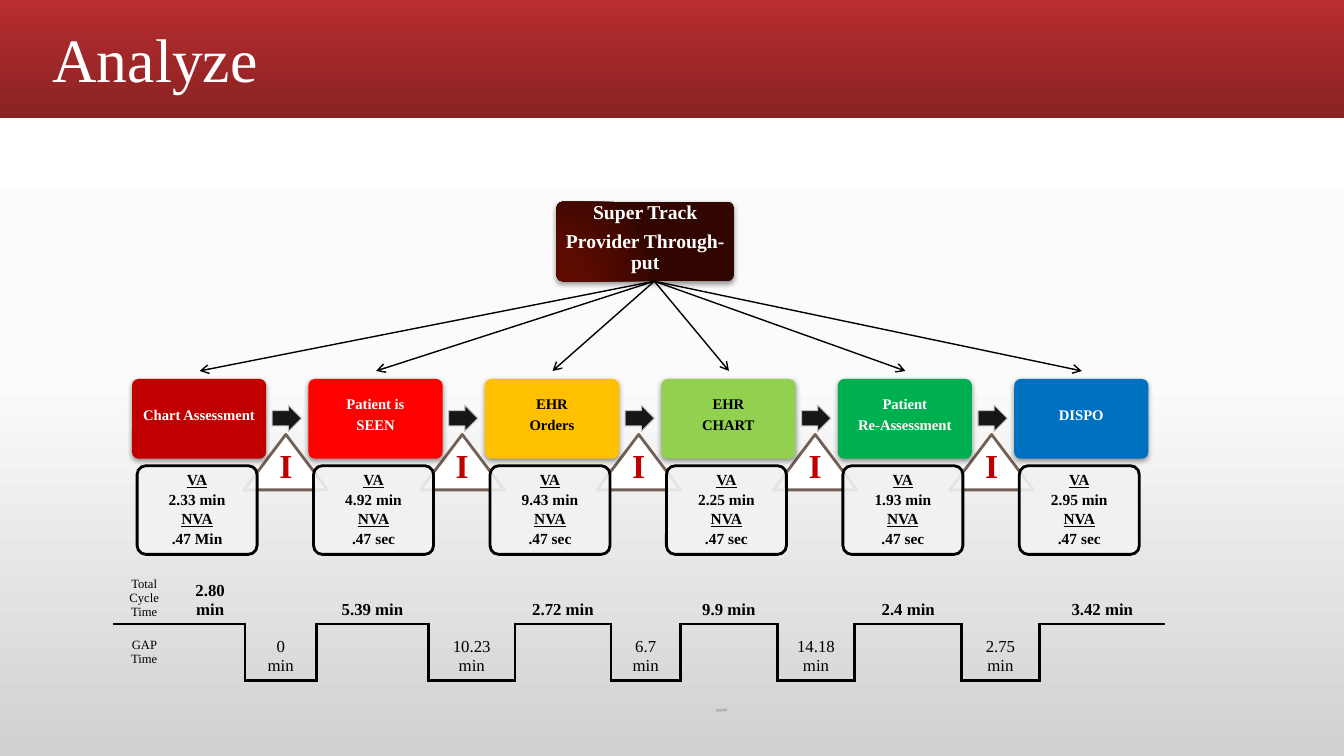
"""Build the Analyze slide: a process flow with value-added and gap times."""
from copy import deepcopy
from dataclasses import dataclass

from lxml import etree
from pptx import Presentation
from pptx.dml.color import RGBColor
from pptx.enum.shapes import MSO_CONNECTOR, MSO_SHAPE
from pptx.enum.text import MSO_ANCHOR, PP_ALIGN
from pptx.oxml.ns import qn
from pptx.util import Inches, Pt

RECTANGLE = MSO_SHAPE.RECTANGLE
ROUNDED = MSO_SHAPE.ROUNDED_RECTANGLE
TRIANGLE = MSO_SHAPE.ISOSCELES_TRIANGLE
ARROW = MSO_SHAPE.RIGHT_ARROW
STRAIGHT = MSO_CONNECTOR.STRAIGHT
TOP, MIDDLE, BOTTOM = MSO_ANCHOR.TOP, MSO_ANCHOR.MIDDLE, MSO_ANCHOR.BOTTOM
LEFT, CENTER = PP_ALIGN.LEFT, PP_ALIGN.CENTER
NO_GRID_STYLE = "{2D5ABB26-0587-4C30-8999-92F81FD0307C}"


@dataclass(frozen=True)
class Theme:
    """Colours, font and type sizes of the slide."""
    font: str = "Times New Roman"
    white: str = "FFFFFF"
    black: str = "000000"
    mark: str = "C00000"
    triangle_line: str = "726056"
    arrow: str = "161617"
    arrow_line: str = "BFBFBF"
    detail: str = "F2F2F2"
    dash: str = "B2B2B2"
    background: tuple = ((0, "FFFFFF"), (50, "FBFBFB"), (100, "D1D1D1"))
    band: tuple = ((0, "B82D2F"), (100, "8A2223"))
    hub: tuple = ((0, "5E0B00"), (30, "5B0B00"), (75, "440800"), (100, "320600"))
    title_size: float = 44
    mark_size: float = 24
    hub_size: float = 14
    card_size: float = 10.5
    detail_size: float = 11
    time_size: float = 12
    label_size: float = 9


THEME = Theme()
PITCH, FIRST_CARD = 1.75, 1.31
CARD_WIDTH, CARD_HEIGHT = 1.33, 0.79
STEPS = [
    (["Chart Assessment"], "C00000", THEME.white, "2.33 min", ".47 Min"),
    (["Patient is", "SEEN"], "FF0000", THEME.white, "4.92 min", ".47 sec"),
    (["EHR", "Orders"], "FFC000", THEME.black, "9.43 min", ".47 sec"),
    (["EHR", "CHART"], "92D050", THEME.black, "2.25 min", ".47 sec"),
    (["Patient", "Re-Assessment"], "00B050", THEME.white, "1.93 min", ".47 sec"),
    (["DISPO"], "0070C0", THEME.white, "2.95 min", ".47 sec"),
]
COLUMN_WIDTHS = [0.62, 0.69, 0.71, 1.11, 0.86, 0.95, 0.69, 0.96, 0.77, 1.06, 0.77, 1.25]
ROW_HEIGHTS = [0.52, 0.56]
CYCLE_TIMES = ["2.80 min", "5.39 min", "2.72 min", "9.9 min", "2.4 min", "3.42 min"]
GAP_TIMES = [["0", "min"], ["10.23 min"], ["6.7", "min"], ["14.18", "min"], ["2.75", "min"]]


def rgb(value):
    """Turn a hex string into a colour."""
    return RGBColor.from_string(value)


def set_gradient(fill, stops):
    """Give a fill a vertical gradient and return its element."""
    fill.gradient()
    fill.gradient_angle = 270
    stop_list = fill.gradient_stops[0]._gs.getparent()
    while len(stop_list) < len(stops):
        stop_list.append(deepcopy(stop_list[0]))
    for stop, (position, color) in zip(fill.gradient_stops, stops):
        stop.position = position / 100
        stop.color.rgb = rgb(color)
    return stop_list.getparent()


def write_lines(frame, lines, size, color, bold=True, gap=0, spacing=1.0, align=CENTER):
    """Write one paragraph per line with shared formatting."""
    frame.word_wrap = True
    for index, line in enumerate(lines):
        paragraph = frame.add_paragraph() if index else frame.paragraphs[0]
        paragraph.text = line
        paragraph.alignment = align
        paragraph.line_spacing = spacing
        paragraph.space_before = Pt(0)
        paragraph.space_after = Pt(gap)
        paragraph.font.name = THEME.font
        paragraph.font.size = Pt(size)
        paragraph.font.bold = bold
        paragraph.font.color.rgb = rgb(color)


def set_insets(frame, left, top, right, bottom):
    """Set the four text margins in inches."""
    frame.margin_left, frame.margin_top = Inches(left), Inches(top)
    frame.margin_right, frame.margin_bottom = Inches(right), Inches(bottom)


def add_block(slide, kind, box, fill=None, line=None, width=0):
    """Add a preset shape without the default shadow and line."""
    shape = slide.shapes.add_shape(kind, *map(Inches, box))
    shape.shadow.inherit = False
    if fill:
        shape.fill.solid()
        shape.fill.fore_color.rgb = rgb(fill)
    if line:
        shape.line.color.rgb = rgb(line)
        shape.line.width = Pt(width)
    else:
        shape.line.fill.background()
    return shape


def add_card(slide, box, lines, size, color, gap, fill=None):
    """Add a rounded card with a soft shadow and bold text."""
    card = add_block(slide, ROUNDED, box, fill)
    card.adjustments[0] = 0.08
    effects = card._element.spPr.find(qn("a:effectLst"))
    shadow = etree.SubElement(effects, qn("a:outerShdw"), blurRad=str(Pt(4)),
                              dist=str(Pt(1.6)), dir="5400000", rotWithShape="0")
    shade = etree.SubElement(shadow, qn("a:srgbClr"), val=THEME.black)
    etree.SubElement(shade, qn("a:alpha"), val="42000")
    frame = card.text_frame
    frame.vertical_anchor = MIDDLE
    set_insets(frame, 0.07, 0.07, 0.07, 0.14)
    write_lines(frame, lines, size, color, gap=gap, spacing=0.9)
    return card


def add_hub(slide):
    """Add the dark card that heads the flow."""
    hub = add_card(slide, (5.52, 2, 1.76, CARD_HEIGHT), ["Super Track", "Provider Through-put"],
                   THEME.hub_size, THEME.white, 5.5)
    gradient = set_gradient(hub.fill, THEME.hub)
    gradient.remove(gradient.find(qn("a:lin")))
    focus = etree.SubElement(gradient, qn("a:path"), path="circle")
    etree.SubElement(focus, qn("a:fillToRect"), l="5000", t="100000", r="120000", b="10000")


def add_detail(slide, left, value_time, other_time):
    """Add the outlined box with value-added and non-value-added times."""
    box = add_block(slide, ROUNDED, (left, 4.62, 1.19, 0.88), THEME.detail, THEME.black, 2)
    box.adjustments[0] = 0.1
    color = box._element.spPr.find(qn("a:solidFill")).find(qn("a:srgbClr"))
    etree.SubElement(color, qn("a:alpha"), val="90000")
    frame = box.text_frame
    frame.vertical_anchor = MIDDLE
    set_insets(frame, 0.07, 0.07, 0.07, 0.07)
    write_lines(frame, ["VA", value_time, "NVA", other_time],
                THEME.detail_size, THEME.black, gap=2, spacing=0.9)
    for heading in frame.paragraphs[::2]:
        heading.font.underline = True


def add_triangle(slide, left):
    """Add an inventory triangle."""
    triangle = add_block(slide, TRIANGLE, (left, 4.31, 0.83, 0.55),
                         THEME.white, THEME.triangle_line, 2)
    triangle.text_frame.vertical_anchor = BOTTOM
    write_lines(triangle.text_frame, ["I"], THEME.mark_size, THEME.mark)


def add_line(slide, start, end, color, width, arrow=False):
    """Add a straight line, with an open arrowhead if wanted."""
    line = slide.shapes.add_connector(STRAIGHT, *map(Inches, (*start, *end)))
    line.line.color.rgb = rgb(color)
    line.line.width = Pt(width)
    if arrow:
        etree.SubElement(line.line._get_or_add_ln(), qn("a:tailEnd"), type="arrow")
    etree.SubElement(line._element.spPr, qn("a:effectLst"))


def set_borders(cell, sides):
    """Draw black borders on the given sides, in the order L, R, T, B."""
    for index, side in enumerate(sides):
        border = etree.Element(qn(f"a:ln{side}"), w=str(Pt(2.25)))
        fill = etree.SubElement(border, qn("a:solidFill"))
        etree.SubElement(fill, qn("a:srgbClr"), val=THEME.black)
        cell._tc.get_or_add_tcPr().insert(index, border)


def add_timeline(slide):
    """Add the stepped timeline of cycle and gap times as a table."""
    box = map(Inches, (1.12, 5.67, sum(COLUMN_WIDTHS), sum(ROW_HEIGHTS)))
    table = slide.shapes.add_table(2, len(COLUMN_WIDTHS), *box).table
    table.first_row = table.horz_banding = False
    table._tbl.tblPr.find(qn("a:tableStyleId")).text = NO_GRID_STYLE
    for row, height in zip(table.rows, ROW_HEIGHTS):
        row.height = Inches(height)
    for index, width in enumerate(COLUMN_WIDTHS):
        table.columns[index].width = Inches(width)
        upper, lower = table.cell(0, index), table.cell(1, index)
        for cell in (upper, lower):
            cell.fill.background()
            cell.vertical_anchor = BOTTOM
        if index and index % 2 == 0:
            set_borders(lower, "LRB")
            write_lines(lower.text_frame, GAP_TIMES[index // 2 - 1],
                        THEME.time_size, THEME.black, bold=False)
            continue
        set_borders(upper, "B")
        set_borders(lower, "T")
        if index:
            write_lines(upper.text_frame, [CYCLE_TIMES[index // 2]], THEME.time_size, THEME.black)
    for row, label in enumerate(["Total Cycle Time", "GAP Time"]):
        write_lines(table.cell(row, 0).text_frame, [label], THEME.label_size,
                    THEME.black, bold=False)
    table.cell(1, 0).vertical_anchor = MIDDLE


def add_title(slide):
    """Place the title on top of the red band."""
    band = add_block(slide, RECTANGLE, (0, 0, 13.33, 1.17))
    set_gradient(band.fill, THEME.band)
    title = slide.shapes.title
    band._element.addnext(title._element)
    title.left, title.top, title.width, title.height = map(Inches, (0.42, 0.11, 11.75, 0.89))
    title.text_frame.vertical_anchor = BOTTOM
    write_lines(title.text_frame, ["Analyze"], THEME.title_size, THEME.white,
                bold=False, spacing=0.9, align=LEFT)


def main():
    """Build and save the slide."""
    presentation = Presentation()
    presentation.slide_width, presentation.slide_height = Inches(13.33), Inches(7.5)
    slide = presentation.slides.add_slide(presentation.slide_layouts[5])
    set_gradient(slide.background.fill, THEME.background)
    add_title(slide)
    add_line(slide, (7.21, 7.04), (7.1, 7.05), THEME.dash, 1.75)
    lefts = [FIRST_CARD + PITCH * index for index in range(len(STEPS))]
    for left in lefts[:-1]:
        add_triangle(slide, left + 1.11)
    for left, (lines, fill, color, value_time, other_time) in zip(lefts, STEPS):
        add_card(slide, (left, 3.76, CARD_WIDTH, CARD_HEIGHT), lines,
                 THEME.card_size, color, 4, fill)
        add_detail(slide, left + 0.05, value_time, other_time)
    for left in lefts[:-1]:
        arrow = add_block(slide, ARROW, (left + 1.39, 4.02, 0.29, 0.26),
                          THEME.arrow, THEME.arrow_line, 0.75)
        arrow.adjustments[0] = 0.58
    add_hub(slide)
    for left in lefts:
        add_line(slide, (6.49, 2.79), (left + 0.67, 3.68), THEME.black, 1, arrow=True)
    add_timeline(slide)
    presentation.save("out.pptx")


if __name__ == "__main__":
    main()
